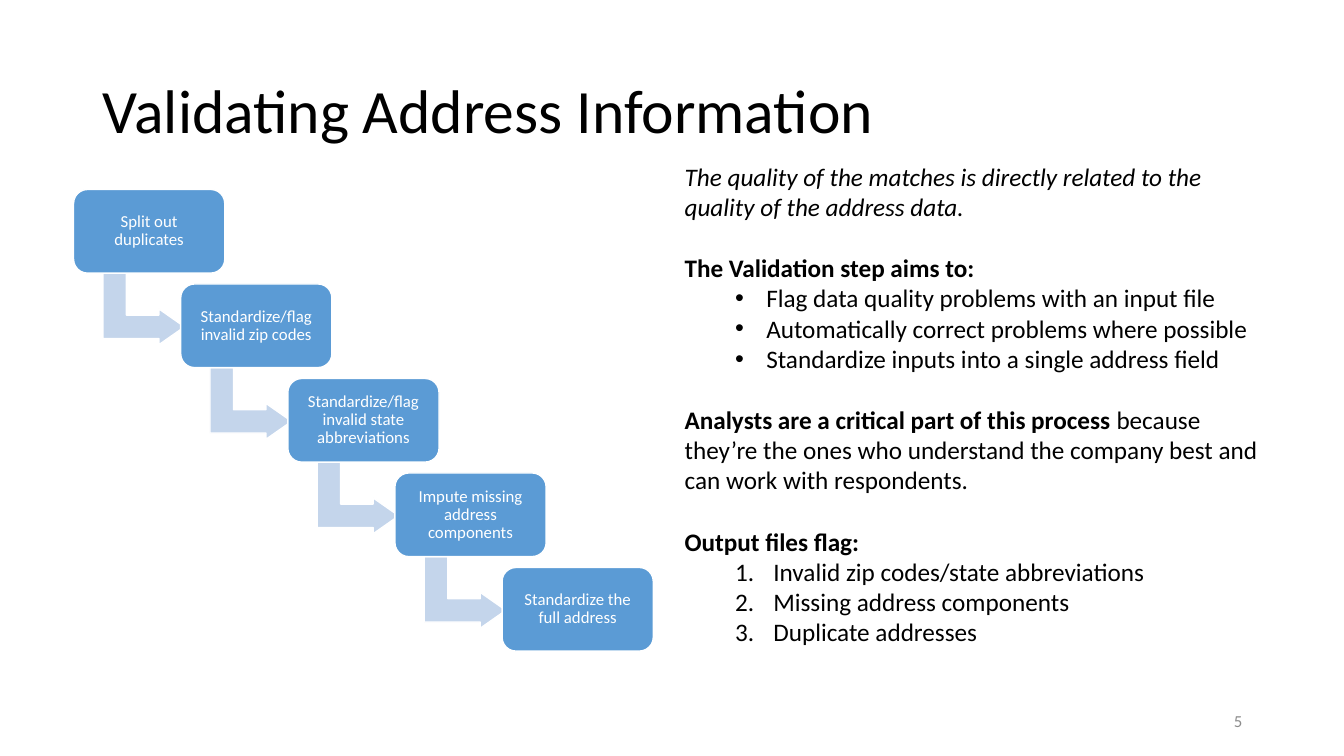
from lxml import etree
from pptx import Presentation
from pptx.dml.color import RGBColor
from pptx.enum.shapes import MSO_SHAPE as Shape
from pptx.enum.text import MSO_ANCHOR as Anchor, MSO_AUTO_SIZE as AutoSize, PP_ALIGN as Align
from pptx.oxml.ns import qn
from pptx.util import Inches, Pt

COLORS = {"text": "000000", "number": "8C8C8C", "box": "5B9BD5",
          "arrow": "C4D5EB", "white": "FFFFFF"}

presentation = Presentation()
presentation.slide_width = Inches(13.33)
presentation.slide_height = Inches(7.5)
slide = presentation.slides.add_slide(presentation.slide_layouts[1])


def write(paragraph, text, size=18, color="text", bold=False, italic=False,
          align=Align.LEFT, spacing=1.0, before=0):
    paragraph.alignment = align
    paragraph.line_spacing = spacing
    paragraph.space_before = Pt(before)
    run = paragraph.add_run()
    run.text = text
    run.font.name = "Calibri"
    run.font.size = Pt(size)
    run.font.bold = bold
    run.font.italic = italic
    run.font.color.rgb = RGBColor.from_string(COLORS[color])


def add_step_shape(kind, left, top, width, height, fill):
    shape = slide.shapes.add_shape(kind, Inches(left), Inches(top), Inches(width), Inches(height))
    shape.shadow.inherit = False
    shape.fill.solid()
    shape.fill.fore_color.rgb = RGBColor.from_string(COLORS[fill])
    shape.line.color.rgb = RGBColor.from_string(COLORS["white"])
    shape.line.width = Pt(1)
    return shape


# Title
title = slide.shapes.title
title.left, title.top, title.width, title.height = map(Inches, (0.92, 0.4, 11.5, 1.45))
title.text_frame.vertical_anchor = Anchor.MIDDLE
title.text_frame.auto_size = AutoSize.NONE
write(title.text_frame.paragraphs[0], "Validating Address Information", size=44, spacing=0.9)

# Descending steps, each joined to the next by a bent arrow
STEPS = ["Split out duplicates", "Standardize/flag invalid zip codes",
         "Standardize/flag invalid state abbreviations",
         "Impute missing address components", "Standardize the full address"]
COLUMN, ROW = 4.25 / 4, 3.75 / 4
for index, step in enumerate(STEPS):
    left, top = 0.73 + index * COLUMN, 1.88 + index * ROW
    if index < len(STEPS) - 1:
        arrow = add_step_shape(Shape.BENT_UP_ARROW, left + 0.34, top + 0.78, 0.71, 0.81, "arrow")
        arrow.rotation = 90
        for position, value in enumerate((0.328, 0.25, 0.358)):
            arrow.adjustments[position] = value
    box = add_step_shape(Shape.ROUNDED_RECTANGLE, left, top, 1.5, 0.83, "box")
    frame = box.text_frame
    frame.word_wrap = True
    frame.vertical_anchor = Anchor.MIDDLE
    frame.margin_left = frame.margin_right = Inches(0.09)
    frame.margin_top = frame.margin_bottom = Inches(0.09)
    write(frame.paragraphs[0], step, size=12, color="white", align=Align.CENTER, spacing=0.9)

# Explanation: list style, space before, runs with their format
LINE = 22
NOTES = [
    (None, 0, [("The quality of the matches is directly related to the "
                "quality of the address data.", {"italic": True})]),
    (None, LINE, [("The Validation step aims to:", {"bold": True})]),
    ("bullet", 0, [("Flag data quality problems with an input file", {})]),
    ("bullet", 0, [("Automatically correct problems where possible", {})]),
    ("bullet", 0, [("Standardize inputs into a single address field", {})]),
    (None, LINE, [("Analysts are a critical part of this process ", {"bold": True}),
                  ("because they’re the ones who understand the company best "
                   "and can work with respondents.", {})]),
    (None, LINE, [("Output files flag:", {"bold": True})]),
    ("number", 0, [("Invalid zip codes/state abbreviations", {})]),
    ("number", 0, [("Missing address components", {})]),
    ("number", 0, [("Duplicate addresses", {})]),
]
MARKERS = {  # left margin, hanging indent, marker tag, marker attributes
    None: (0, 0, "a:buNone", {}),
    "bullet": (0.81, -0.31, "a:buChar", {"char": "•"}),
    "number": (0.88, -0.38, "a:buAutoNum", {"type": "arabicPeriod"}),
}
body = slide.placeholders[1]
body.left, body.top, body.width, body.height = map(Inches, (6.69, 1.55, 5.98, 5.25))
body.text_frame.auto_size = AutoSize.NONE
for index, (style, before, runs) in enumerate(NOTES):
    paragraph = body.text_frame.add_paragraph() if index else body.text_frame.paragraphs[0]
    margin, indent, tag, attributes = MARKERS[style]
    paragraph.level = 1 if style else 0
    properties = paragraph._p.get_or_add_pPr()
    properties.set("marL", str(Inches(margin)))
    properties.set("indent", str(Inches(indent)))
    if style == "bullet":
        etree.SubElement(properties, qn("a:buFont"), typeface="Arial")
    elif style == "number":
        etree.SubElement(properties, qn("a:buFont"), typeface="+mj-lt")
    etree.SubElement(properties, qn(tag), attributes)
    for text, style_options in runs:
        write(paragraph, text, before=before, **style_options)

# Slide number
number = slide.shapes.add_textbox(Inches(9.42), Inches(6.95), Inches(3), Inches(0.4))
number.text_frame.word_wrap = True
number.text_frame.vertical_anchor = Anchor.MIDDLE
write(number.text_frame.paragraphs[0], "5", size=12, color="number", align=Align.RIGHT)

presentation.save("out.pptx")
